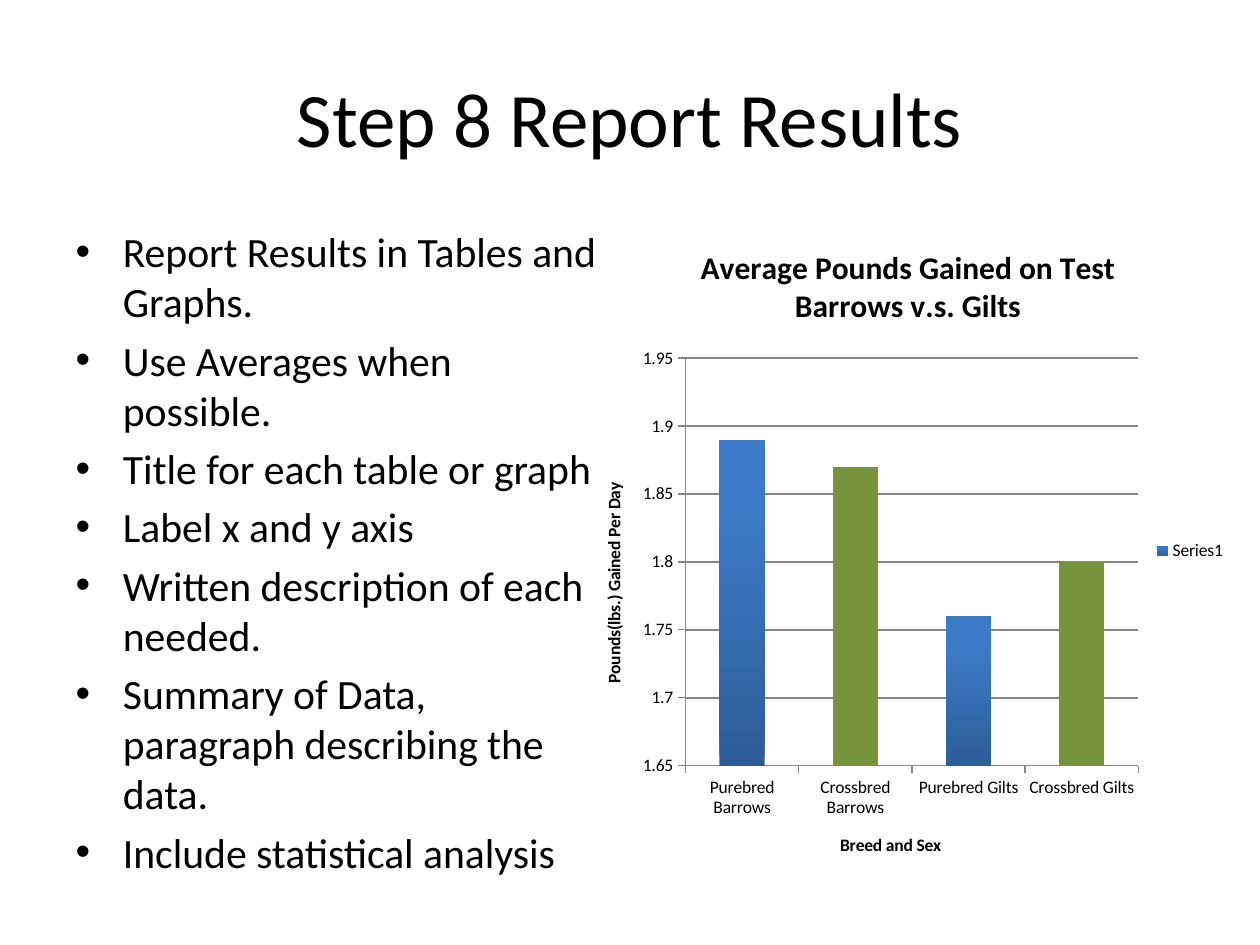
from pptx import Presentation
from pptx.chart.data import CategoryChartData
from pptx.dml.color import RGBColor
from pptx.enum.chart import XL_CHART_TYPE, XL_LEGEND_POSITION, XL_TICK_MARK
from pptx.enum.text import MSO_ANCHOR, MSO_AUTO_SIZE, PP_ALIGN
from pptx.util import Pt

PX = 914400 / 126
FACE = "Calibri"
HUES = {"text": "000000", "line": "868686", "low": "2C5D98",
        "high": "3C7BC7", "cross": "77933C"}

TITLE = "Step 8 Report Results"
POINTS = [
    "Report Results in Tables and Graphs.",
    "Use Averages when possible.",
    "Title for each table or graph",
    "Label x and y axis",
    "Written description of each needed.",
    "Summary of Data, paragraph describing the data.",
    "Include statistical analysis",
]
HEAD = "Average Pounds Gained on Test Barrows v.s. Gilts"
GAINS = {"Purebred Barrows": 1.89, "Crossbred Barrows": 1.87,
         "Purebred Gilts": 1.76, "Crossbred Gilts": 1.8}
BOXES = {"title": (63, 38, 1134, 158), "body": (63, 220, 557, 624),
         "chart": (577, 220, 662, 662)}


def hue(name):
    return RGBColor.from_string(HUES[name])


def place(name):
    return [round(n * PX) for n in BOXES[name]]


def style(font, size, bold=False):
    font.name, font.size, font.bold = FACE, Pt(size), bold
    font.color.rgb = hue("text")


def write(shape, name, lines, size):
    """Move a placeholder and fill it with one paragraph per line."""
    shape.left, shape.top, shape.width, shape.height = place(name)
    frame = shape.text_frame
    frame.text = "\n".join(lines)
    frame.auto_size = MSO_AUTO_SIZE.NONE
    for para in frame.paragraphs:
        style(para.font, size)
    return frame


def label(owner, text, size):
    """Give a chart or an axis its bold title."""
    owner.has_title = True
    frame = (getattr(owner, "chart_title", None) or owner.axis_title).text_frame
    frame.text = text
    style(frame.paragraphs[0].font, size, True)


def add_gains(slide):
    data = CategoryChartData()
    data.categories = list(GAINS)
    data.add_series("Series1", list(GAINS.values()))
    chart = slide.shapes.add_chart(
        XL_CHART_TYPE.COLUMN_CLUSTERED, *place("chart"), data).chart
    style(chart.font, 10)
    label(chart, HEAD, 18)
    chart.has_legend = True
    chart.legend.position = XL_LEGEND_POSITION.RIGHT
    chart.legend.include_in_layout = False

    breed, pounds = chart.category_axis, chart.value_axis
    label(breed, "Breed and Sex", 10)
    label(pounds, "Pounds(lbs.) Gained Per Day", 10)
    pounds.minimum_scale, pounds.maximum_scale = 1.65, 1.95
    pounds.major_unit = 0.05
    pounds.has_major_gridlines = True
    for axis in (breed, pounds):
        axis.major_tick_mark = XL_TICK_MARK.OUTSIDE
        axis.format.line.color.rgb = hue("line")
    pounds.major_gridlines.format.line.color.rgb = hue("line")

    plot = chart.plots[0]
    plot.gap_width = 150
    plot.vary_by_categories = False
    bars = plot.series[0]
    fill = bars.format.fill
    fill.gradient()
    fill.gradient_angle = 90
    for stop, name, spot in zip(fill.gradient_stops, ("low", "high"), (0, 0.8)):
        stop.color.rgb = hue(name)
        stop.position = spot
    for i, breed_name in enumerate(GAINS):
        if breed_name.startswith("Crossbred"):
            cross = bars.points[i].format.fill
            cross.solid()
            cross.fore_color.rgb = hue("cross")


def main():
    deck = Presentation()
    deck.slide_width, deck.slide_height = round(1260 * PX), round(945 * PX)
    slide = deck.slides.add_slide(deck.slide_layouts[1])
    head = write(slide.shapes.title, "title", [TITLE], 44)
    head.vertical_anchor = MSO_ANCHOR.MIDDLE
    head.paragraphs[0].alignment = PP_ALIGN.CENTER
    write(slide.placeholders[1], "body", POINTS, 23.8)
    add_gains(slide)
    deck.save("out.pptx")


if __name__ == "__main__":
    main()
